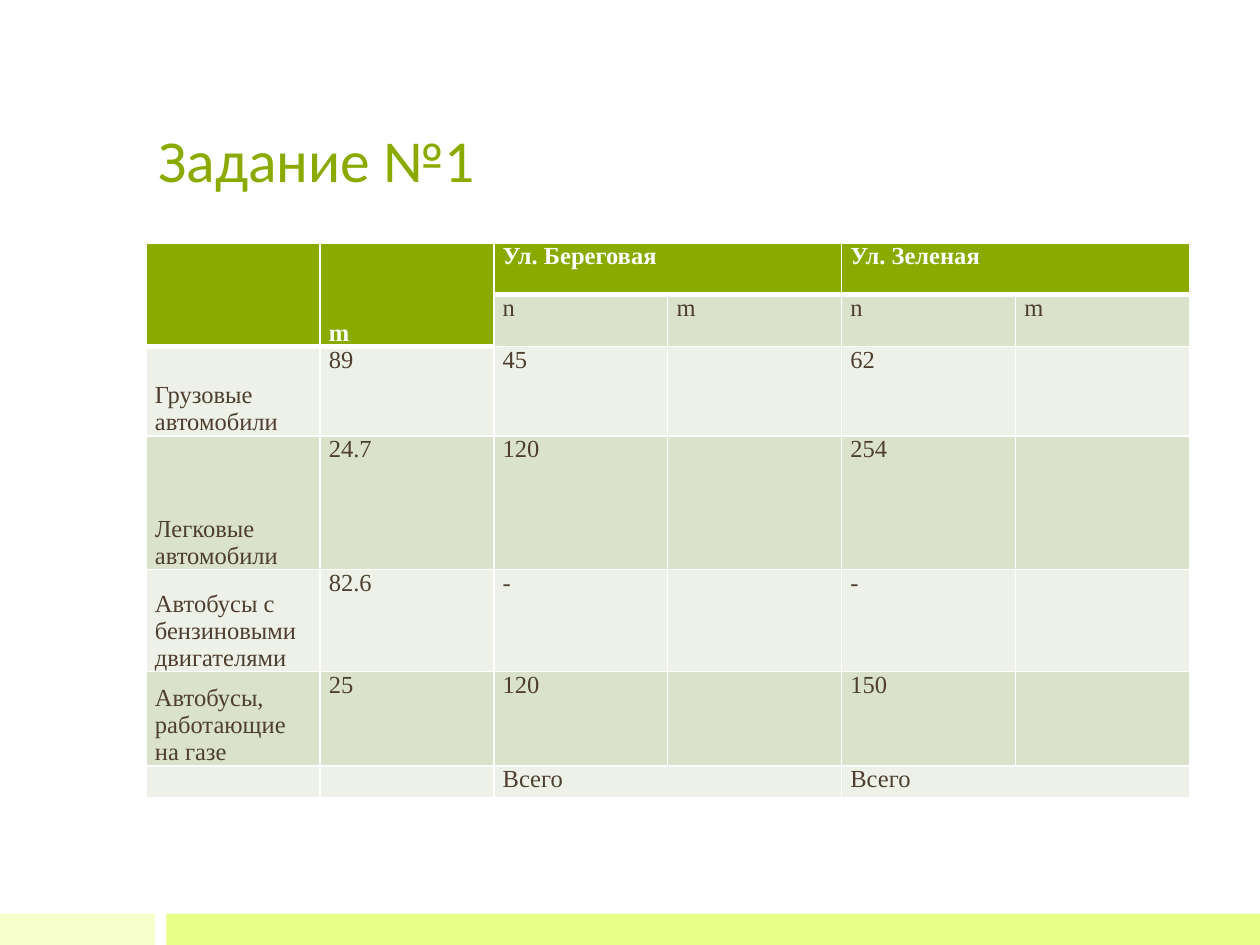
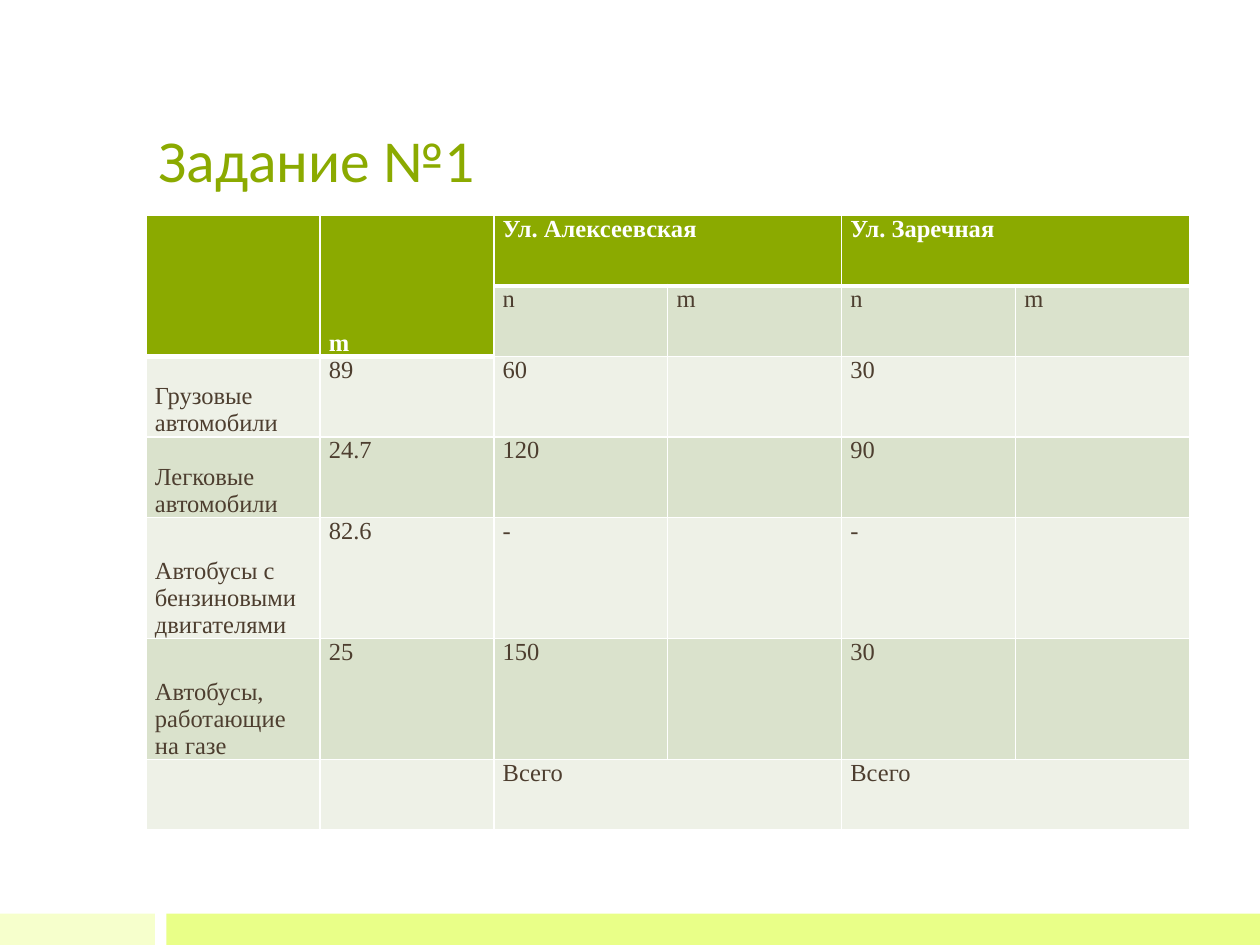
import pptx
import pptx.util
import pptx.dml.color
import pptx.enum.shapes
import pptx.enum.text
import pptx.oxml.ns
from lxml import etree

Inches = pptx.util.Inches
Pt = pptx.util.Pt
ANCHOR = pptx.enum.text.MSO_ANCHOR
ALIGN = pptx.enum.text.PP_ALIGN

GREEN, WHITE, BROWN = "8BAA00", "FFFFFF", "4D3E2F"
BAND_DARK, BAND_LIGHT = "DAE2CC", "EEF1E7"
FOOTER_BANDS = [(0, 1.23, "F6FFCC"), (1.32, 8.68, "E9FF88")]
LEFT, COL_W, COLS = 1.16, 1.38, 6

# Vehicle types with their emission factor m
VEHICLES = [
    ("Грузовые автомобили", "89"),
    ("Легковые автомобили", "24.7"),
    ("Автобусы с бензиновыми двигателями", "82.6"),
    ("Автобусы, работающие на газе", "25"),
]

# Per slide: table top, row heights, and vehicle counts n for two streets
SLIDES = [
    (1.93, [0.41, 0.41, 0.71, 1.06, 0.81, 0.75, 0.25],
     ("Ул. Береговая", ["45", "120", "-", "120"]),
     ("Ул. Зеленая", ["62", "254", "-", "150"])),
    (1.71, [0.56, 0.56, 0.64, 0.64, 0.96, 0.96, 0.56],
     ("Ул. Алексеевская", ["60", "120", "-", "150"]),
     ("Ул. Заречная", ["30", "90", "-", "30"])),
]


def rgb(hex_color):
    return pptx.dml.color.RGBColor.from_string(hex_color)


def add_border(cell, side, points):
    tcPr = cell._tc.get_or_add_tcPr()
    ln = etree.SubElement(tcPr, pptx.oxml.ns.qn("a:ln" + side), w=str(Pt(points)))
    fill = etree.SubElement(ln, pptx.oxml.ns.qn("a:solidFill"))
    etree.SubElement(fill, pptx.oxml.ns.qn("a:srgbClr"), val=WHITE)


prs = pptx.Presentation()
prs.slide_width, prs.slide_height = Inches(10), Inches(7.5)

for top, heights, (street1, counts1), (street2, counts2) in SLIDES:
    s = prs.slides.add_slide(prs.slide_layouts[6])

    # Footer bands
    for x, width, color in FOOTER_BANDS:
        sp = s.shapes.add_shape(pptx.enum.shapes.MSO_SHAPE.RECTANGLE,
                                Inches(x), Inches(7.25), Inches(width), Inches(0.25))
        sp.shadow.inherit = False
        sp.fill.solid()
        sp.fill.fore_color.rgb = rgb(color)
        sp.line.fill.background()

    # Title
    tf = s.shapes.add_textbox(Inches(LEFT), Inches(0.3), Inches(7.69), Inches(1.29)).text_frame
    tf.word_wrap = True
    tf.vertical_anchor = ANCHOR.BOTTOM
    p = tf.paragraphs[0]
    p.text = "Задание №1"
    p.font.size, p.font.name = Pt(34), "Calibri"
    p.font.color.rgb = rgb(GREEN)

    # Table contents
    rows = [["", "m", street1, "", street2, ""], ["", "", "n", "m", "n", "m"]]
    for (vehicle, factor), n1, n2 in zip(VEHICLES, counts1, counts2):
        rows.append([vehicle, factor, n1, "", n2, ""])
    rows.append(["", "", "Всего", "", "Всего", ""])

    table = s.shapes.add_table(len(rows), COLS, Inches(LEFT), Inches(top),
                               Inches(COL_W * COLS), Inches(sum(heights))).table
    for column in table.columns:
        column.width = Inches(COL_W)
    for row, height in zip(table.rows, heights):
        row.height = Inches(height)

    # Cell text, borders and fills
    for i, texts in enumerate(rows):
        for j, text in enumerate(texts):
            cell = table.cell(i, j)
            header_rows = 2 if j < 2 else 1
            header = i < header_rows
            cell.margin_left = cell.margin_right = Inches(0.07)
            cell.margin_top = cell.margin_bottom = 0
            label = j == 0 or (header and j == 1)
            cell.vertical_anchor = ANCHOR.BOTTOM if label else ANCHOR.TOP
            p = cell.text_frame.paragraphs[0]
            p.text = text
            p.alignment = ALIGN.LEFT if header or j < 2 else ALIGN.JUSTIFY
            p.font.size, p.font.name, p.font.bold = Pt(14), "Times New Roman", header
            p.font.color.rgb = rgb(WHITE if header else BROWN)
            add_border(cell, "L", 1)
            add_border(cell, "R", 1)
            add_border(cell, "T", 3 if i == header_rows else 1)
            add_border(cell, "B", 3 if header else 1)
            cell.fill.solid()
            band = BAND_DARK if i % 2 else BAND_LIGHT
            cell.fill.fore_color.rgb = rgb(GREEN if header else band)

    # Merged headers and totals
    for j in (0, 1):
        table.cell(0, j).merge(table.cell(1, j))
    for i in (0, len(rows) - 1):
        for j in (2, 4):
            table.cell(i, j).merge(table.cell(i, j + 1))

prs.save("out.pptx")
